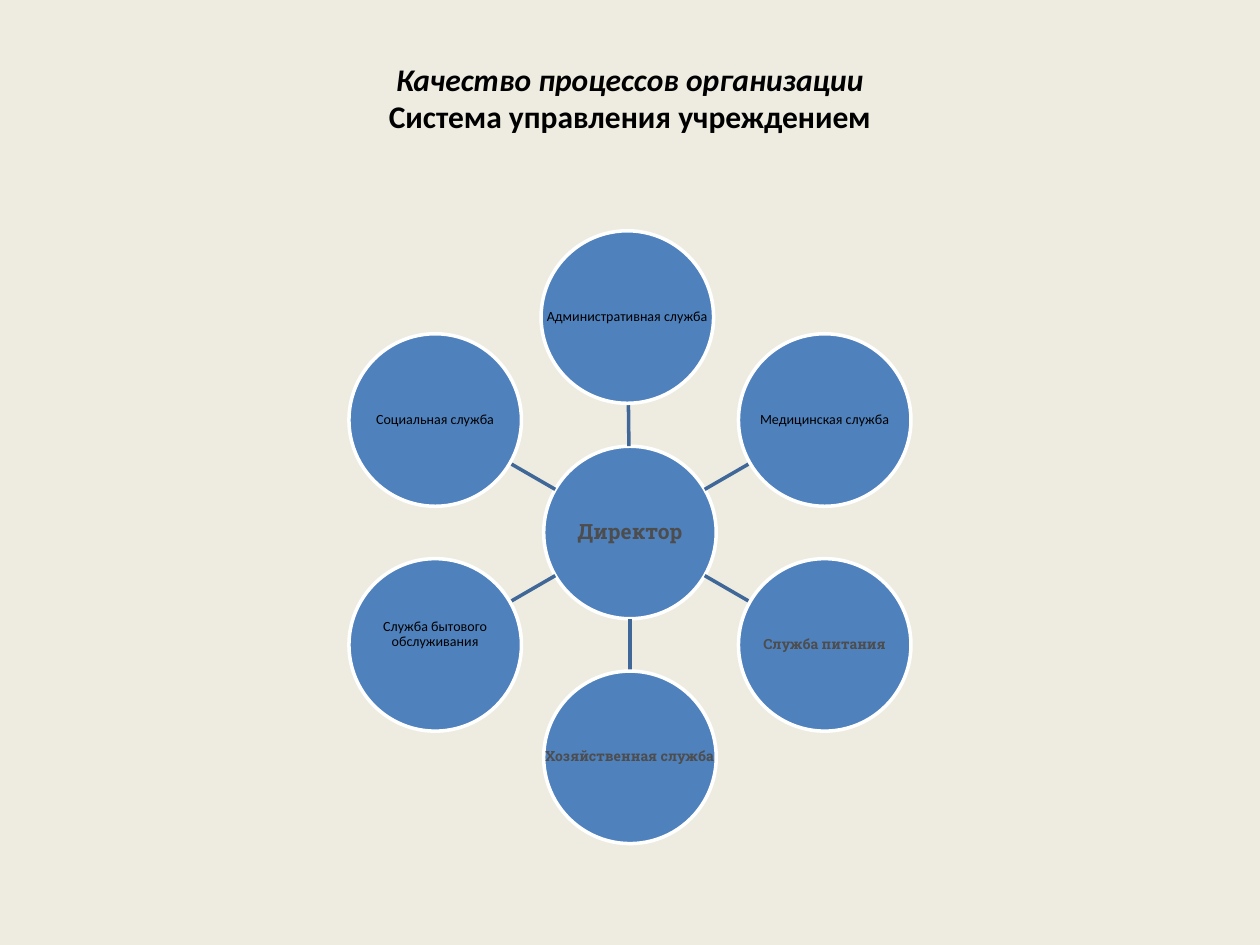
import math
import pptx
import pptx.util
import pptx.dml.color
import pptx.enum.shapes
import pptx.enum.text
import pptx.oxml

Pt = pptx.util.Pt
PLAIN = ("Calibri", "000000", False)
SLAB = ("Roboto Slab", "4D4D4D", True)
TITLE = "Качество процессов организации\vСистема управления учреждением"
DIRECTOR = "Директор"
SERVICES = [
    ("Административная служба", PLAIN, (-1.5, 5.4), 0),
    ("Медицинская служба", PLAIN, (0, 0), 0),
    ("Служба питания", SLAB, (0, 0), 0),
    ("Хозяйственная служба", SLAB, (0, 0), 0),
    ("Служба бытового\vобслуживания", PLAIN, (0, 0), 11.4),
    ("Социальная служба", PLAIN, (0, 0), 0),
]
CENTER = (360, 304.3)
ORBIT = 128.5
DIAMETER = 98.6
INSET = 0.7


def color(value):
    return pptx.dml.color.RGBColor.from_string(value)


def style_span(span, size, face):
    span.font.name, ink, span.font.bold = face
    span.font.size = Pt(size)
    span.font.color.rgb = color(ink)


def add_title(page):
    box = page.shapes.title
    box.left, box.top, box.width, box.height = Pt(36), Pt(21.6), Pt(648), Pt(90)
    frame = box.text_frame
    frame.text = TITLE
    frame.auto_size = pptx.enum.text.MSO_AUTO_SIZE.NONE
    frame.vertical_anchor = pptx.enum.text.MSO_ANCHOR.MIDDLE
    frame.margin_bottom = Pt(25.4)
    para = frame.paragraphs[0]
    para.alignment = pptx.enum.text.PP_ALIGN.CENTER
    for span, italic in zip(para.runs, (True, False)):
        style_span(span, 18, ("Calibri", "000000", True))
        span.font.italic = italic


def add_circle(page, middle, text, size, face, lift=0):
    left, top = (Pt(value - DIAMETER / 2) for value in middle)
    circle = page.shapes.add_shape(
        pptx.enum.shapes.MSO_SHAPE.OVAL, left, top, Pt(DIAMETER), Pt(DIAMETER))
    circle.shadow.inherit = False
    circle.fill.solid()
    circle.fill.fore_color.rgb = color("4F81BD")
    circle.line.color.rgb = color("FFFFFF")
    circle.line.width = Pt(2)
    frame = circle.text_frame
    frame.text = text
    frame.word_wrap = False
    frame.vertical_anchor = pptx.enum.text.MSO_ANCHOR.MIDDLE
    frame.margin_left = frame.margin_right = frame.margin_top = Pt(INSET)
    frame.margin_bottom = Pt(INSET + lift)
    para = frame.paragraphs[0]
    para.alignment = pptx.enum.text.PP_ALIGN.CENTER
    para.line_spacing = 0.9
    for span in para.runs:
        style_span(span, size, face)


def add_spoke(page, middle):
    distance = math.dist(CENTER, middle)
    start, end = (
        [Pt(a + (b - a) * reach / distance) for a, b in zip(CENTER, middle)]
        for reach in (DIAMETER / 2, distance - DIAMETER / 2))
    spoke = page.shapes.add_connector(
        pptx.enum.shapes.MSO_CONNECTOR.STRAIGHT, *start, *end)
    spoke.line.color.rgb = color("3F6797")
    spoke.line.width = Pt(2)
    properties = spoke._element.spPr
    properties.append(properties.makeelement(pptx.oxml.ns.qn("a:effectLst"), {}))


def main():
    deck = pptx.Presentation()
    deck.slide_width, deck.slide_height = Pt(720), Pt(540)
    page = deck.slides.add_slide(deck.slide_layouts.get_by_name("Title Only"))
    page.background.fill.solid()
    page.background.fill.fore_color.rgb = color("EEECE1")
    add_title(page)
    add_circle(page, CENTER, DIRECTOR, 12, SLAB)
    for index, (text, face, shift, lift) in enumerate(SERVICES):
        angle = 2 * math.pi * index / len(SERVICES)
        middle = (CENTER[0] + ORBIT * math.sin(angle) + shift[0],
                  CENTER[1] - ORBIT * math.cos(angle) + shift[1])
        add_spoke(page, middle)
        add_circle(page, middle, text, 8, face, lift)
    deck.save("out.pptx")


if __name__ == "__main__":
    main()
